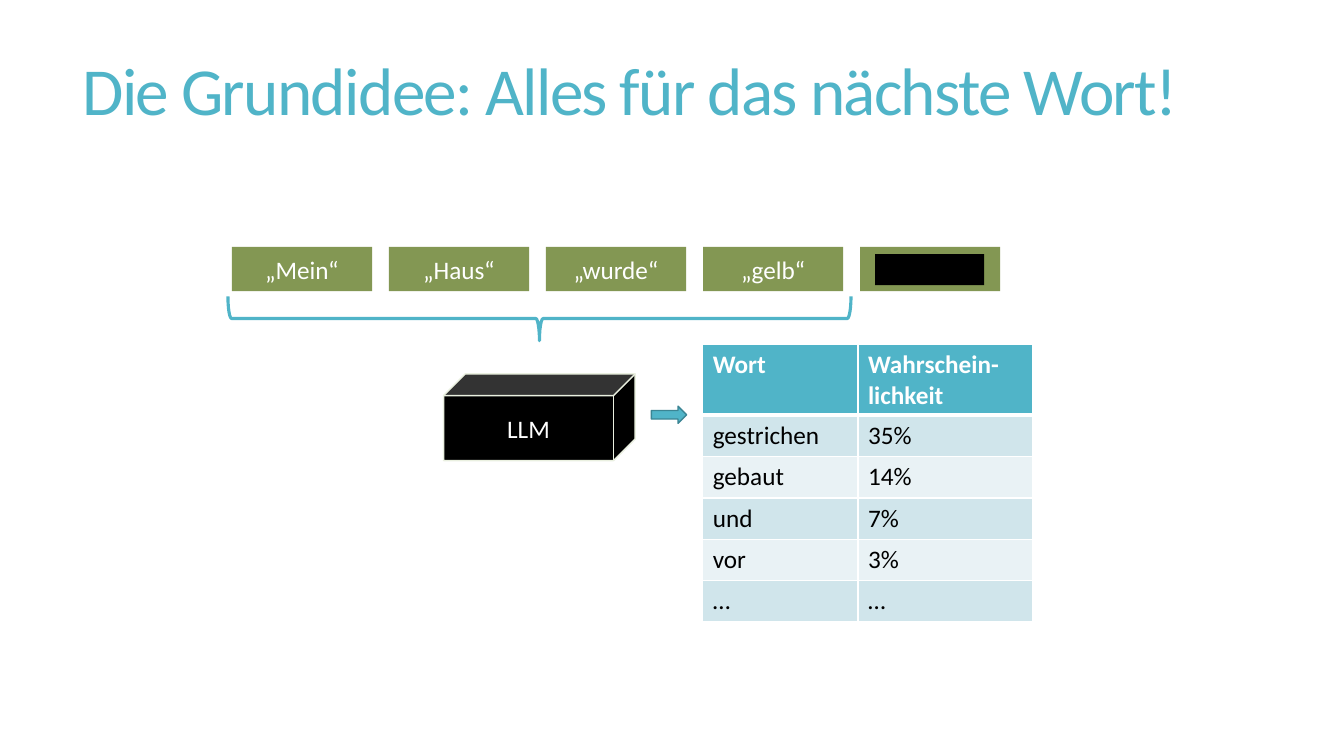
"""Build the slide on predicting the next word with a language model."""
from lxml.etree import SubElement
from pptx import Presentation
from pptx.dml.color import RGBColor
from pptx.enum.shapes import MSO_SHAPE as SHAPE
from pptx.enum.text import MSO_ANCHOR as ANCHOR, PP_ALIGN as ALIGN
from pptx.oxml.ns import qn
from pptx.util import Inches, Pt

TEAL, OLIVE, BLACK, WHITE = "50B4C8", "839753", "000000", "FFFFFF"


def add_text(tf, text, size=18, color=WHITE, bold=False, align=ALIGN.LEFT,
             anchor=ANCHOR.TOP, line_spacing=None, char_spacing=None):
    tf.word_wrap = True
    tf.vertical_anchor = anchor
    for i, line in enumerate(text.split("\n")):
        p = tf.add_paragraph() if i else tf.paragraphs[0]
        p.alignment = align
        p.line_spacing = line_spacing
        r = p.add_run()
        r.text = line
        r.font.name = "Calibri"
        r.font.size = Pt(size)
        r.font.bold = bold
        r.font.color.rgb = RGBColor.from_string(color)
        if char_spacing:
            r.font._element.set("spc", str(char_spacing))


def add_shape(kind, left, top, width, height, fill=None, line=None, weight=1, text=""):
    sp = s.shapes.add_shape(kind, Inches(left), Inches(top), Inches(width), Inches(height))
    sp.shadow.inherit = False
    if fill:
        sp.fill.solid()
        sp.fill.fore_color.rgb = RGBColor.from_string(fill)
    else:
        sp.fill.background()
    if line:
        sp.line.color.rgb = RGBColor.from_string(line)
        sp.line.width = Pt(weight)
    else:
        sp.line.fill.background()
    if text:
        add_text(sp.text_frame, text, align=ALIGN.CENTER, anchor=ANCHOR.MIDDLE)
    return sp


prs = Presentation()
prs.slide_width, prs.slide_height = Inches(13.33), Inches(7.5)
s = prs.slides.add_slide(prs.slide_layouts[6])

title = s.shapes.add_textbox(Inches(0.72), Inches(0.55), Inches(11.78), Inches(1.81))
add_text(title.text_frame, "Die Grundidee: Alles für das nächste Wort!", size=48,
         color=TEAL, line_spacing=0.85, char_spacing=-120)

word_pitch = (8.53 - 2.3) / 4
for i, word in enumerate(["„Mein“", "„Haus“", "„wurde“", "„gelb“", ""]):
    add_shape(SHAPE.RECTANGLE, 2.3 + i * word_pitch, 2.45, 1.39, 0.44, OLIVE, text=word)

brace = add_shape(SHAPE.RIGHT_BRACE, 5.13, 0.07, 0.44, 6.18, line=TEAL, weight=2.25)
brace.rotation = 90
add_shape(SHAPE.CUBE, 4.4, 3.71, 1.9, 0.86, BLACK, "EAF0E0", text="LLM")
add_shape(SHAPE.RIGHT_ARROW, 6.46, 4.03, 0.35, 0.17, TEAL, "3B8594")

rows = [("Wort", "Wahrschein-\nlichkeit"), ("gestrichen", "35%"), ("gebaut", "14%"),
        ("und", "7%"), ("vor", "3%"), ("…", "…")]
table = s.shapes.add_table(len(rows), 2, Inches(6.97), Inches(3.42),
                           Inches(3.27), Inches(2.74)).table
for column, width in zip(table.columns, (1.54, 1.73)):
    column.width = Inches(width)
for i, row in enumerate(rows):
    table.rows[i].height = Inches(0.41 if i else 0.69)
    fill = ("E9F2F5" if i % 2 == 0 else "D0E5EB") if i else TEAL
    for j, text in enumerate(row):
        cell = table.cell(i, j)
        add_text(cell.text_frame, text, color=BLACK if i else WHITE, bold=i == 0)
        tc_pr = cell._tc.get_or_add_tcPr()
        for side in ("lnL", "lnR", "lnT", "lnB"):
            thick = (i, side) in ((0, "lnB"), (1, "lnT"))
            ln = SubElement(tc_pr, qn(f"a:{side}"), w=str(Pt(3 if thick else 1)))
            SubElement(SubElement(ln, qn("a:solidFill")), qn("a:srgbClr"), val=WHITE)
        cell.fill.solid()
        cell.fill.fore_color.rgb = RGBColor.from_string(fill)

add_shape(SHAPE.RECTANGLE, 8.68, 2.52, 1.08, 0.31, BLACK)

prs.save("out.pptx")
